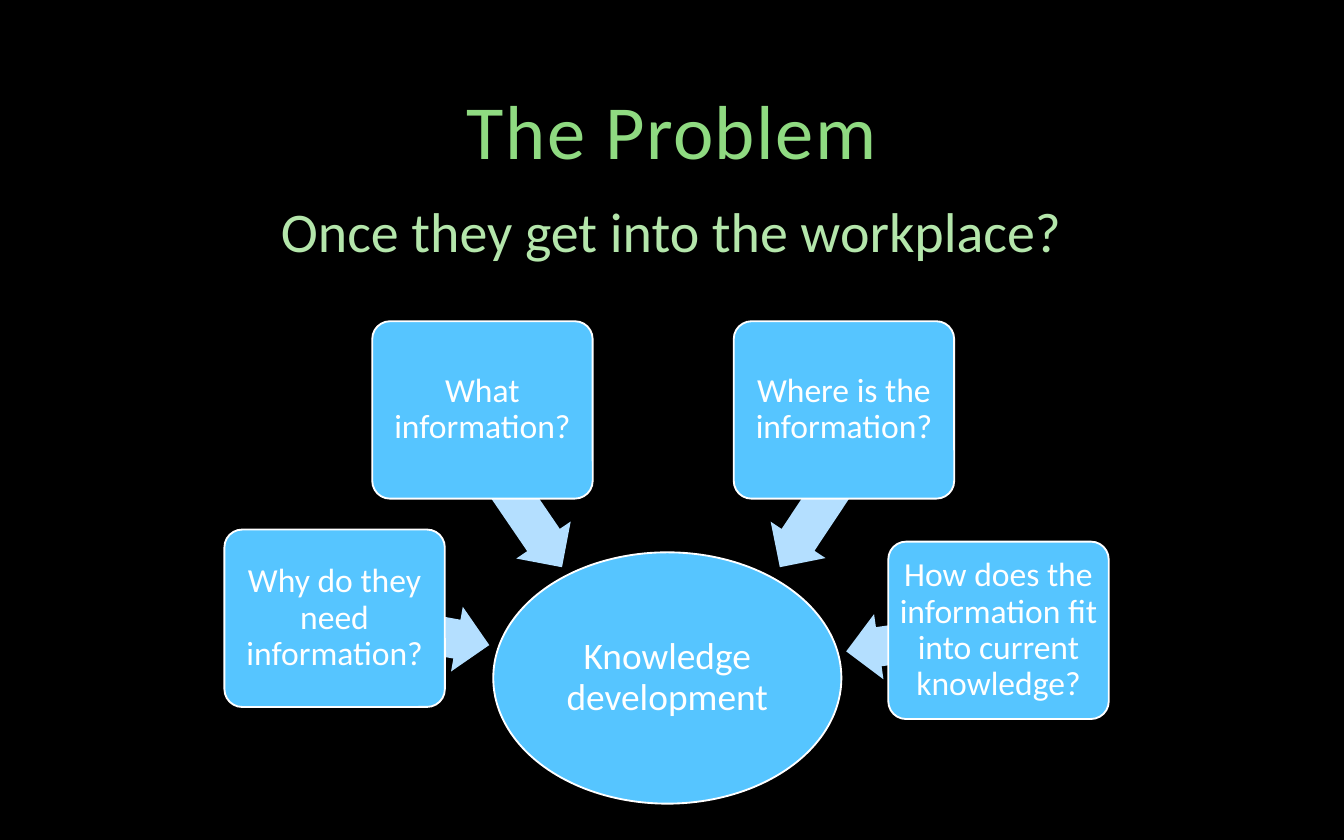
from pptx import Presentation
from pptx.dml.color import RGBColor
from pptx.enum.shapes import MSO_SHAPE as Shape
from pptx.enum.text import MSO_ANCHOR as Anchor, MSO_AUTO_SIZE as AutoSize, PP_ALIGN as Align
from pptx.oxml.ns import qn
from pptx.util import Inches, Pt
from lxml.etree import SubElement

COLORS = {
    "background": "000000",
    "title": "8FDA81",
    "subtitle": "B4E6AB",
    "node": "56C5FF",
    "arrow": "B4DFFF",
    "white": "FFFFFF",
}
CARD_SIZE = (1.64, 1.32)
ARROW_HEIGHT = 0.49

CARDS = [
    ("Why do they need information?", (1.67, 3.94), (2.48, 4.45, 1.17), 190.3),
    ("What information?", (2.77, 2.39), (3.15, 3.43, 1.32), 235.7),
    ("Where is the information?", (5.46, 2.39), (5.51, 3.43, 1.31), 303.6),
    ("How does the information fit into current knowledge?", (6.61, 4.03), (6.29, 4.52, 1.15), 351.8),
]


class SlideBuilder:
    """Holds the style and the current slide, and adds its elements."""

    font = "Calibri"

    def __init__(self, presentation):
        self.slide = presentation.slides.add_slide(presentation.slide_layouts[1])
        self.fill(self.slide.background, "background")

    def fill(self, target, color):
        target.fill.solid()
        target.fill.fore_color.rgb = RGBColor.from_string(COLORS[color])

    def set_text(self, shape, text, size, color, anchor, insets):
        frame = shape.text_frame
        frame.text = text
        frame.word_wrap = True
        frame.auto_size = AutoSize.NONE
        frame.vertical_anchor = anchor
        frame.margin_left = frame.margin_right = Inches(insets[0])
        frame.margin_top = frame.margin_bottom = Inches(insets[1])
        paragraph = frame.paragraphs[0]
        paragraph.alignment = Align.CENTER
        paragraph.line_spacing = 0.9
        paragraph.space_before = Pt(0)
        properties = paragraph._p.get_or_add_pPr()
        properties.set("marL", "0")
        properties.set("indent", "0")
        SubElement(properties, qn("a:buNone"))
        paragraph.font.name = self.font
        paragraph.font.size = Pt(size)
        paragraph.font.color.rgb = RGBColor.from_string(COLORS[color])
        return paragraph

    def placeholder(self, index, box, text, size, color, anchor):
        shape = self.slide.placeholders[index]
        shape.left, shape.top, shape.width, shape.height = map(Inches, box)
        return self.set_text(shape, text, size, color, anchor, (0.08, 0.04))

    def title(self, box, text):
        paragraph = self.placeholder(0, box, text, 41, "title", Anchor.BOTTOM)
        paragraph.runs[0]._r.get_or_add_rPr().set("spc", "80")

    def subtitle(self, box, text):
        self.placeholder(1, box, text, 30, "subtitle", Anchor.TOP)

    def shape(self, kind, box, color):
        shape = self.slide.shapes.add_shape(kind, *map(Inches, box))
        shape.shadow.inherit = False
        self.fill(shape, color)
        return shape

    def node(self, kind, box, text, size, inset):
        shape = self.shape(kind, box, "node")
        shape.line.color.rgb = RGBColor.from_string(COLORS["white"])
        shape.line.width = Pt(1)
        self.set_text(shape, text, size, "white", Anchor.MIDDLE, (inset, inset))
        return shape

    def hub(self, box, text):
        self.node(Shape.OVAL, box, text, 20, 0.01)

    def card(self, position, text):
        shape = self.node(Shape.ROUNDED_RECTANGLE, (*position, *CARD_SIZE), text, 18, 0.03)
        shape.adjustments[0] = 0.1

    def arrow(self, place, rotation):
        shape = self.shape(Shape.LEFT_ARROW, (*place, ARROW_HEIGHT), "arrow")
        shape.line.fill.background()
        shape.adjustments[0] = 0.6
        shape.adjustments[1] = 0.5
        shape.rotation = rotation


def main():
    presentation = Presentation()
    presentation.slide_width = Inches(10)
    presentation.slide_height = Inches(6.25)
    builder = SlideBuilder(presentation)
    builder.title((1.25, 0.17, 7.5, 1.18), "The Problem")
    builder.subtitle((1.25, 1.48, 7.49, 4.59), "Once they get into the workplace?")
    builder.hub((3.67, 4.11, 2.59, 1.87), "Knowledge development")
    for text, position, arrow_place, rotation in CARDS:
        builder.arrow(arrow_place, rotation)
        builder.card(position, text)
    presentation.save("out.pptx")


if __name__ == "__main__":
    main()
